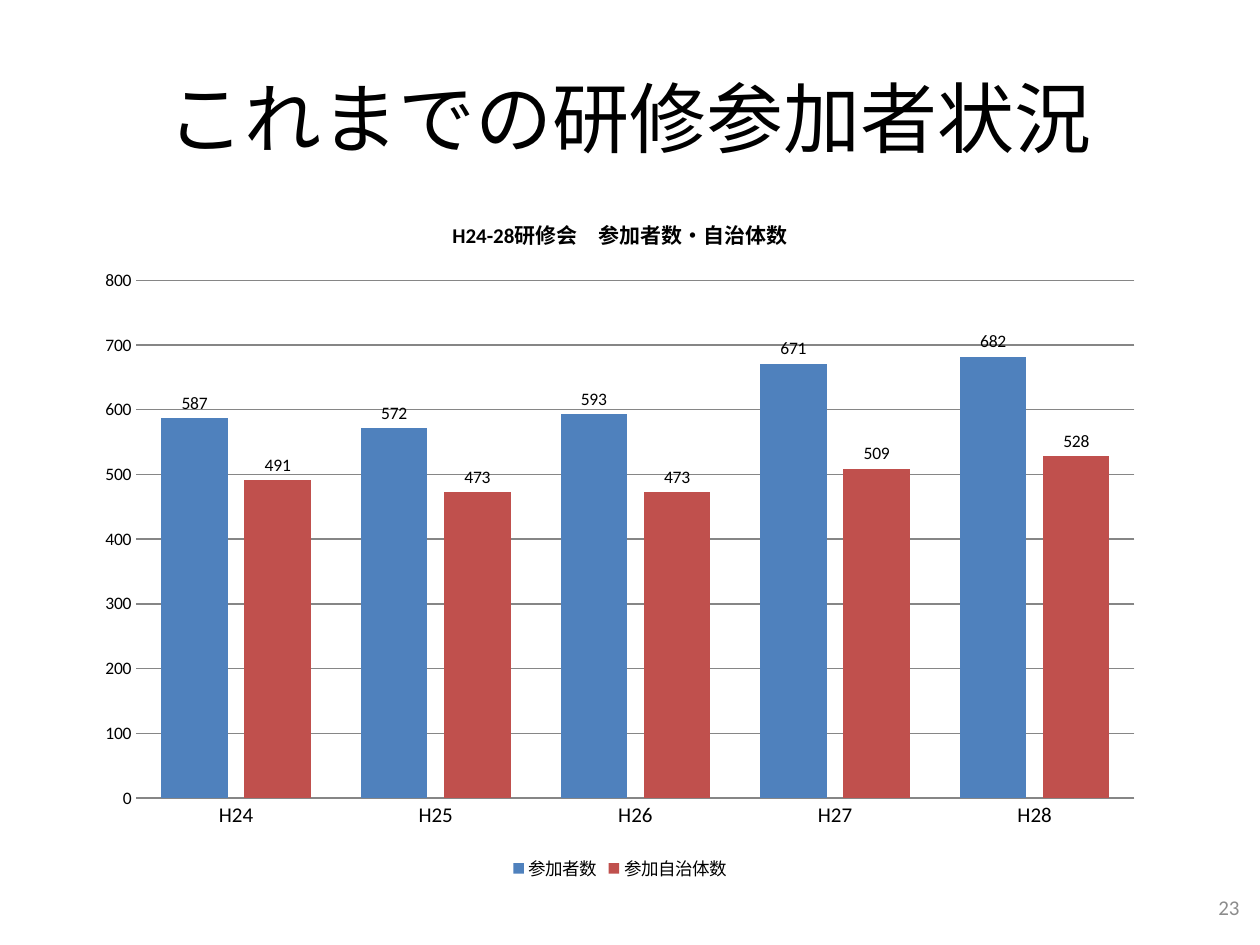
import pptx
import pptx.chart.data
import pptx.dml.color
import pptx.enum.chart
import pptx.enum.text
import pptx.util

PX = 914400 / 126
FONT = "Calibri"
BLACK = pptx.dml.color.RGBColor(0x00, 0x00, 0x00)
GRAY = pptx.dml.color.RGBColor(0x8C, 0x8C, 0x8C)
RULE_GRAY = pptx.dml.color.RGBColor(0x86, 0x86, 0x86)
BLUE = pptx.dml.color.RGBColor(0x4F, 0x81, 0xBD)
RED = pptx.dml.color.RGBColor(0xC0, 0x50, 0x4D)

YEARS = ["H24", "H25", "H26", "H27", "H28"]
ATTENDANCE = [
    ("参加者数", [587, 572, 593, 671, 682], BLUE),
    ("参加自治体数", [491, 473, 473, 509, 528], RED),
]


def to_emu(box):
    """Turn a (left, top, width, height) box in px into EMU lengths."""
    return [pptx.util.Emu(round(length * PX)) for length in box]


def style_font(font, size, color=BLACK, bold=False):
    font.name = FONT
    font.size = pptx.util.Pt(size)
    font.bold = bold
    font.color.rgb = color


def add_line_of_text(slide, box, wording, size, color, alignment):
    frame = slide.shapes.add_textbox(*to_emu(box)).text_frame
    frame.word_wrap = True
    frame.vertical_anchor = pptx.enum.text.MSO_ANCHOR.MIDDLE
    paragraph = frame.paragraphs[0]
    paragraph.alignment = alignment
    run = paragraph.add_run()
    run.text = wording
    style_font(run.font, size, color)


def style_axes(chart):
    years, counts = chart.category_axis, chart.value_axis
    for axis, size in ((years, 12), (counts, 10)):
        axis.major_tick_mark = pptx.enum.chart.XL_TICK_MARK.NONE
        axis.minor_tick_mark = pptx.enum.chart.XL_TICK_MARK.NONE
        style_font(axis.tick_labels.font, size)
    counts.minimum_scale, counts.maximum_scale, counts.major_unit = 0, 800, 100
    counts.format.line.fill.background()
    counts.has_major_gridlines = True
    for line in (years.format.line, counts.major_gridlines.format.line):
        line.color.rgb = RULE_GRAY
        line.width = pptx.util.Pt(0.75)


def style_columns(plot):
    plot.gap_width = 75
    plot.overlap = -25
    plot.vary_by_categories = False
    for series, (_, _, color) in zip(plot.series, ATTENDANCE):
        series.format.fill.solid()
        series.format.fill.fore_color.rgb = color
        series.invert_if_negative = False
        labels = series.data_labels
        labels.show_value = True
        labels.position = pptx.enum.chart.XL_LABEL_POSITION.OUTSIDE_END
        style_font(labels.font, 10)


def add_attendance_chart(slide, box):
    data = pptx.chart.data.CategoryChartData()
    data.categories = YEARS
    for name, counts, _ in ATTENDANCE:
        data.add_series(name, counts)
    column_type = pptx.enum.chart.XL_CHART_TYPE.COLUMN_CLUSTERED
    chart = slide.shapes.add_chart(column_type, *to_emu(box), data).chart
    style_font(chart.font, 10)

    chart.has_title = True
    heading = chart.chart_title.text_frame.paragraphs[0].add_run()
    heading.text = "H24-28研修会　参加者数・自治体数"
    style_font(heading.font, 12, bold=True)
    chart.chart_title.include_in_layout = False

    chart.has_legend = True
    chart.legend.position = pptx.enum.chart.XL_LEGEND_POSITION.BOTTOM
    chart.legend.include_in_layout = False
    style_font(chart.legend.font, 10)

    style_axes(chart)
    style_columns(chart.plots[0])


def main():
    presentation = pptx.Presentation()
    presentation.slide_width, presentation.slide_height = to_emu((1260, 945))
    slide = presentation.slides.add_slide(presentation.slide_layouts[6])
    align = pptx.enum.text.PP_ALIGN
    add_line_of_text(slide, (63, 38, 1134, 158), "これまでの研修参加者状況",
                     44, BLACK, align.CENTER)
    add_attendance_chart(slide, (84, 192, 1072, 694))
    add_line_of_text(slide, (958, 882, 294, 50), "23", 12, GRAY, align.RIGHT)
    presentation.save("out.pptx")


if __name__ == "__main__":
    main()
